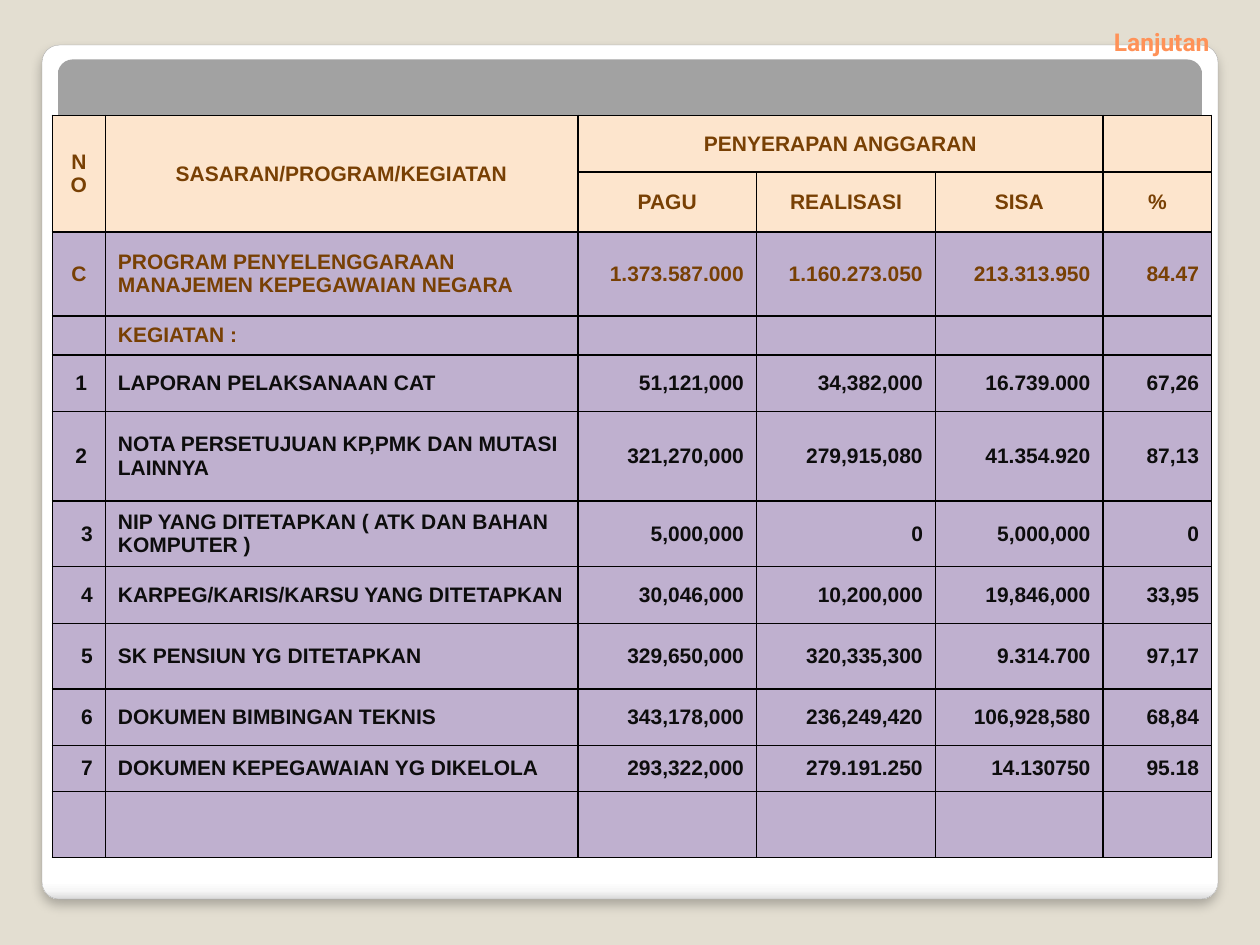
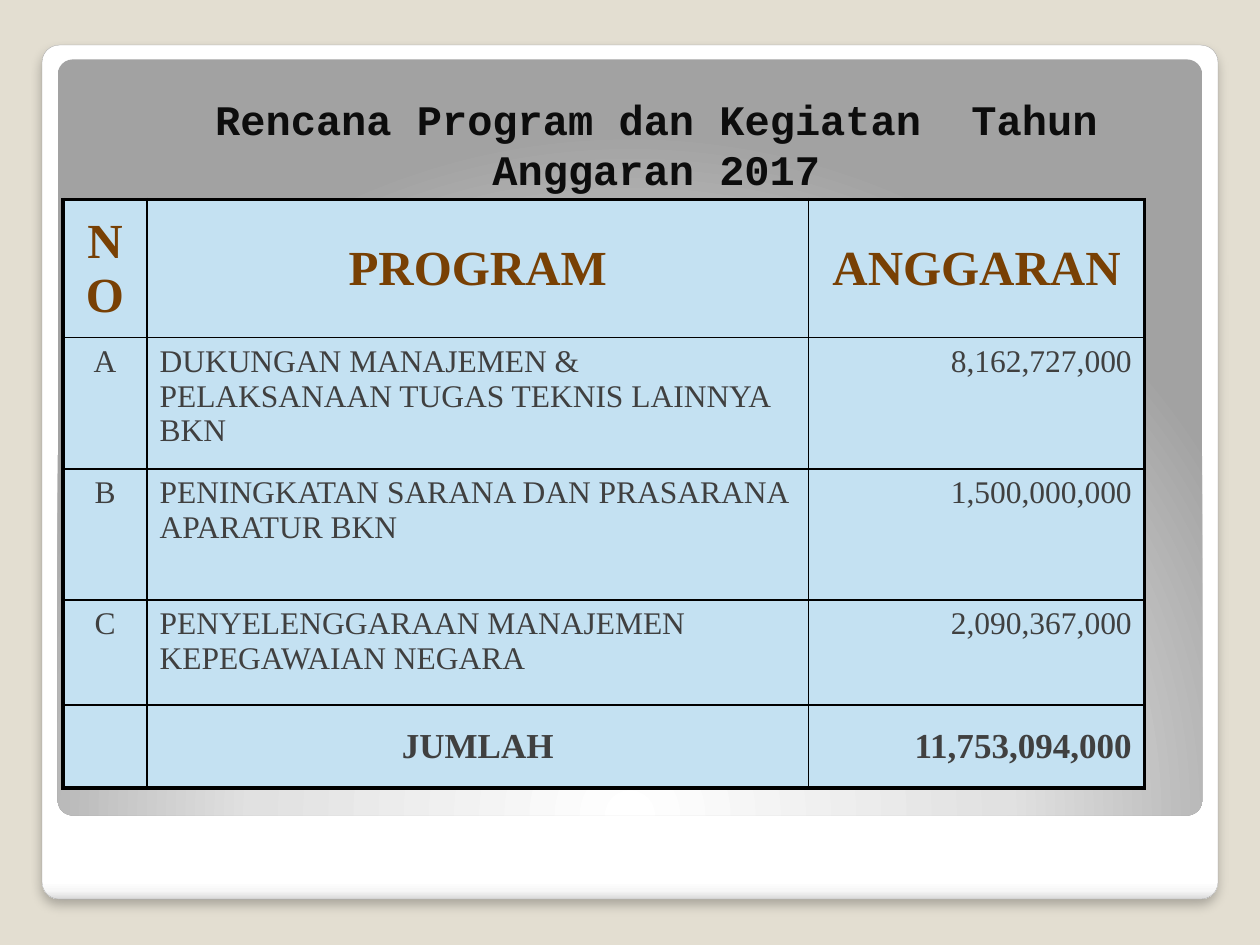
import pptx
import pptx.util
import pptx.dml.color
import pptx.enum.shapes
import pptx.enum.text
import pptx.oxml
import pptx.oxml.ns

Pt = pptx.util.Pt
RGB = pptx.dml.color.RGBColor.from_string
ALIGN = pptx.enum.text.PP_ALIGN
ANCHOR = pptx.enum.text.MSO_ANCHOR
NAMESPACE = pptx.oxml.ns.nsdecls("a")

COLORS = {
    "backdrop": "E3DED1", "frame_line": "A4A4A4", "orange": "FF9258",
    "brown": "784004", "ink": "0D0D0D", "gray": "404040", "black": "000000",
    "peach": "FDE5CD", "lilac": "BFB0CF", "sky": "C4E1F2",
}


def add_grid(page, left, top, widths, heights, records, fill, font_name, edge_width):
    table = page.shapes.add_table(
        len(heights), len(widths), Pt(left), Pt(top), Pt(sum(widths)), Pt(sum(heights))
    ).table
    table.first_row = table.horz_banding = False
    for column, width in zip(table.columns, widths):
        column.width = Pt(width)
    last_row, last_column = len(heights) - 1, len(widths) - 1
    for row_index, record in enumerate(records):
        table.rows[row_index].height = Pt(heights[row_index])
        for column_index, text in enumerate(record):
            cell = table.cell(row_index, column_index)
            cell.fill.solid()
            cell.fill.fore_color.rgb = RGB(COLORS[fill])
            sides = {"L": column_index == 0, "R": column_index == last_column,
                     "T": row_index == 0, "B": row_index == last_row}
            properties = cell._tc.get_or_add_tcPr()
            for position, (side, outer) in enumerate(sides.items()):
                width = Pt(edge_width if outer else 1)
                properties.insert(position, pptx.oxml.parse_xml(
                    f'<a:ln{side} {NAMESPACE} w="{width}"><a:solidFill>'
                    f'<a:srgbClr val="{COLORS["black"]}"/></a:solidFill></a:ln{side}>'))
            cell.text = text
            cell.vertical_anchor = ANCHOR.MIDDLE
            cell.text_frame.paragraphs[0].font.name = font_name
    return table


def style_title(page, text, bounds, anchor, align, size, font_name, color):
    box = page.shapes.title
    box.left, box.top, box.width, box.height = map(Pt, bounds)
    frame = box.text_frame
    frame.text = text
    frame.word_wrap = True
    frame.auto_size = pptx.enum.text.MSO_AUTO_SIZE.NONE
    frame.vertical_anchor = anchor
    para = frame.paragraphs[0]
    para.alignment = align
    para.font.size = Pt(size)
    para.font.name = font_name
    para.font.bold = True
    para.font.color.rgb = RGB(COLORS[color])
    return frame


deck = pptx.Presentation()
deck.slide_width, deck.slide_height = Pt(720), Pt(540)
backdrop = deck.slide_master.background.fill
backdrop.solid()
backdrop.fore_color.rgb = RGB(COLORS["backdrop"])
layout = deck.slide_layouts[5]
progress_page = deck.slides.add_slide(layout)
plan_page = deck.slides.add_slide(layout)

panels = [
    ((24, 25.8, 672, 488), [(0, "FFFFFF"), (98, "FFFFFF"), (99, "F7F7F7"), (100, "DADADA")],
     '<a:lin ang="5400000" scaled="0"/>'),
    ((33, 34, 654, 432), [(0, "FFFFFF"), (55, "E1E1E1"), (100, "A2A2A2")],
     '<a:path path="circle"><a:fillToRect l="50000" t="175000" r="50000" b="-75000"/></a:path>'),
]
for index, (bounds, stops, direction) in enumerate(panels):
    panel = progress_page.shapes.add_shape(
        pptx.enum.shapes.MSO_SHAPE.ROUNDED_RECTANGLE, *map(Pt, bounds))
    panel.adjustments[0] = 0.02
    panel.shadow.inherit = False
    stop_xml = "".join(
        f'<a:gs pos="{place * 1000}"><a:srgbClr val="{color}"/></a:gs>' for place, color in stops)
    panel.element.spPr.insert(2, pptx.oxml.parse_xml(
        f'<a:gradFill {NAMESPACE} rotWithShape="1"><a:gsLst>{stop_xml}</a:gsLst>{direction}</a:gradFill>'))
    if index == 0:
        panel.line.color.rgb = RGB(COLORS["frame_line"])
        panel.line.width = Pt(0.16)
        effects = panel.element.spPr.find(pptx.oxml.ns.qn("a:effectLst"))
        effects.append(pptx.oxml.parse_xml(
            f'<a:outerShdw {NAMESPACE} blurRad="{Pt(6)}" dist="{Pt(4)}" dir="5400000" algn="t" '
            f'rotWithShape="0"><a:srgbClr val="{COLORS["black"]}"><a:alpha val="25000"/>'
            '</a:srgbClr></a:outerShdw>'))
    else:
        panel.line.fill.background()
    layout.shapes.element.insert(2 + index, panel.element)

frame = style_title(progress_page, "Lanjutan", (510, -6, 192, 42), ANCHOR.BOTTOM,
                    ALIGN.RIGHT, 14, "Roboto", "orange")
frame.margin_right = Pt(10.8)

progress_records = [
    ("NO", "SASARAN/PROGRAM/KEGIATAN", "PENYERAPAN ANGGARAN", "", "", ""),
    ("", "", "PAGU", "REALISASI", "SISA", "%"),
    ("C", "PROGRAM PENYELENGGARAAN MANAJEMEN KEPEGAWAIAN NEGARA",
     "1.373.587.000", "1.160.273.050", "213.313.950", "84.47"),
    ("", "KEGIATAN :", "", "", "", ""),
    ("1 ", "LAPORAN PELAKSANAAN CAT", "51,121,000", "34,382,000", "16.739.000", "67,26"),
    ("2 ", "NOTA PERSETUJUAN KP,PMK DAN MUTASI LAINNYA",
     "321,270,000", "279,915,080", "41.354.920", "87,13"),
    ("3", "NIP YANG DITETAPKAN ( ATK DAN BAHAN KOMPUTER )", "5,000,000", "0", "5,000,000", "0"),
    ("4", "KARPEG/KARIS/KARSU YANG DITETAPKAN", "30,046,000", "10,200,000", "19,846,000", "33,95"),
    ("5", "SK PENSIUN YG DITETAPKAN", "329,650,000", "320,335,300", "9.314.700", "97,17"),
    ("6", "DOKUMEN BIMBINGAN TEKNIS", "343,178,000", "236,249,420", "106,928,580", "68,84"),
    ("7", "DOKUMEN KEPEGAWAIAN YG DIKELOLA", "293,322,000", "279.191.250", "14.130750", "95.18"),
    ("", "", "", "", "", ""),
]
progress = add_grid(
    progress_page, 30, 66, [30.2, 270, 102.2, 102.2, 95.8, 62],
    [32.4, 33.8, 48, 22.4, 32.4, 51, 37.5, 32.4, 37.5, 32.4, 26.4, 37.5],
    progress_records, "lilac", "Arial", 1)
for row_index in range(len(progress_records)):
    for column_index in range(6):
        cell = progress.cell(row_index, column_index)
        para = cell.text_frame.paragraphs[0]
        para.font.size = Pt(12)
        para.font.bold = True
        para.font.color.rgb = RGB(COLORS["brown" if row_index < 4 else "ink"])
        if row_index < 2:
            cell.fill.fore_color.rgb = RGB(COLORS["peach"])
        if row_index < 2 or (row_index == 2 and column_index == 0):
            para.alignment = ALIGN.CENTER
        elif column_index != 1:
            para.alignment = ALIGN.RIGHT
for first, last in [((0, 0), (1, 0)), ((0, 1), (1, 1)), ((0, 2), (0, 4))]:
    progress.cell(*first).merge(progress.cell(*last))

frame = style_title(plan_page, "Rencana Program dan Kegiatan  Tahun Anggaran 2017",
                    (108, 47.5, 534, 65.5), ANCHOR.TOP, ALIGN.CENTER, 24, "Courier New", "ink")
frame.margin_top = Pt(6)
frame.paragraphs[0].line_spacing = Pt(28.6)

plan_records = [
    ("NO", "PROGRAM", "ANGGARAN"),
    ("A", "DUKUNGAN MANAJEMEN & PELAKSANAAN TUGAS TEKNIS LAINNYA BKN", "8,162,727,000"),
    ("B", "PENINGKATAN SARANA DAN PRASARANA APARATUR BKN", "1,500,000,000"),
    ("C", "PENYELENGGARAAN MANAJEMEN KEPEGAWAIAN NEGARA", "2,090,367,000"),
    ("", "JUMLAH", "11,753,094,000"),
]
plan = add_grid(plan_page, 36, 114, [48, 378, 192], [79, 75, 75, 60, 47.5],
                plan_records, "sky", "Times New Roman", 2.25)
for row_index, size in enumerate([28, 18, 18, 18, 20]):
    is_header, is_item = row_index == 0, size == 18
    for column_index in range(3):
        cell = plan.cell(row_index, column_index)
        para = cell.text_frame.paragraphs[0]
        para.font.size = Pt(size)
        para.font.bold = not is_item
        para.font.color.rgb = RGB(COLORS["brown" if is_header else "gray"])
        para.alignment = ALIGN.CENTER
        if is_item:
            cell.vertical_anchor = ANCHOR.TOP
        if is_item and column_index == 1:
            para.alignment = ALIGN.LEFT
        if not is_header and column_index == 2:
            para.alignment = ALIGN.RIGHT

deck.save("out.pptx")
